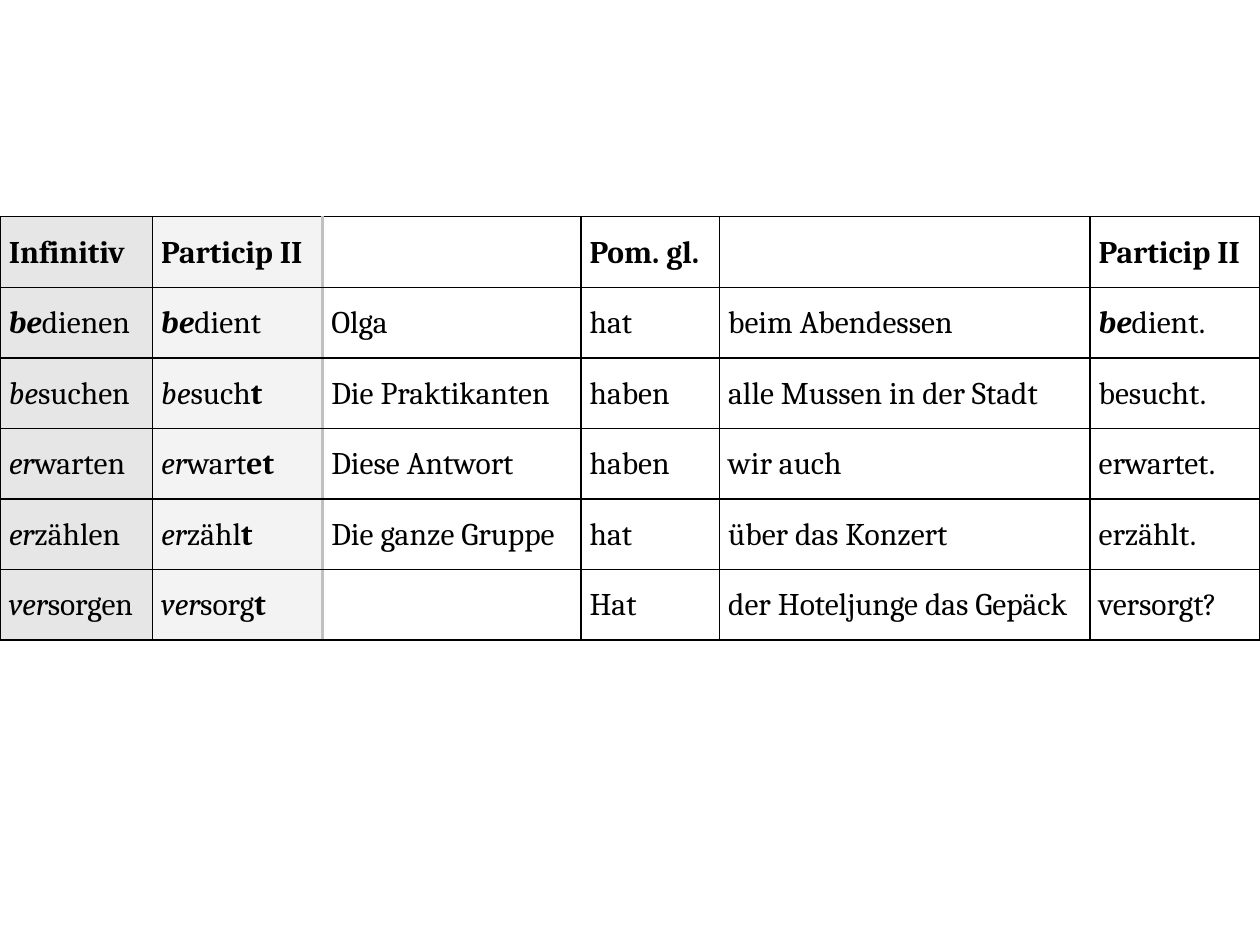
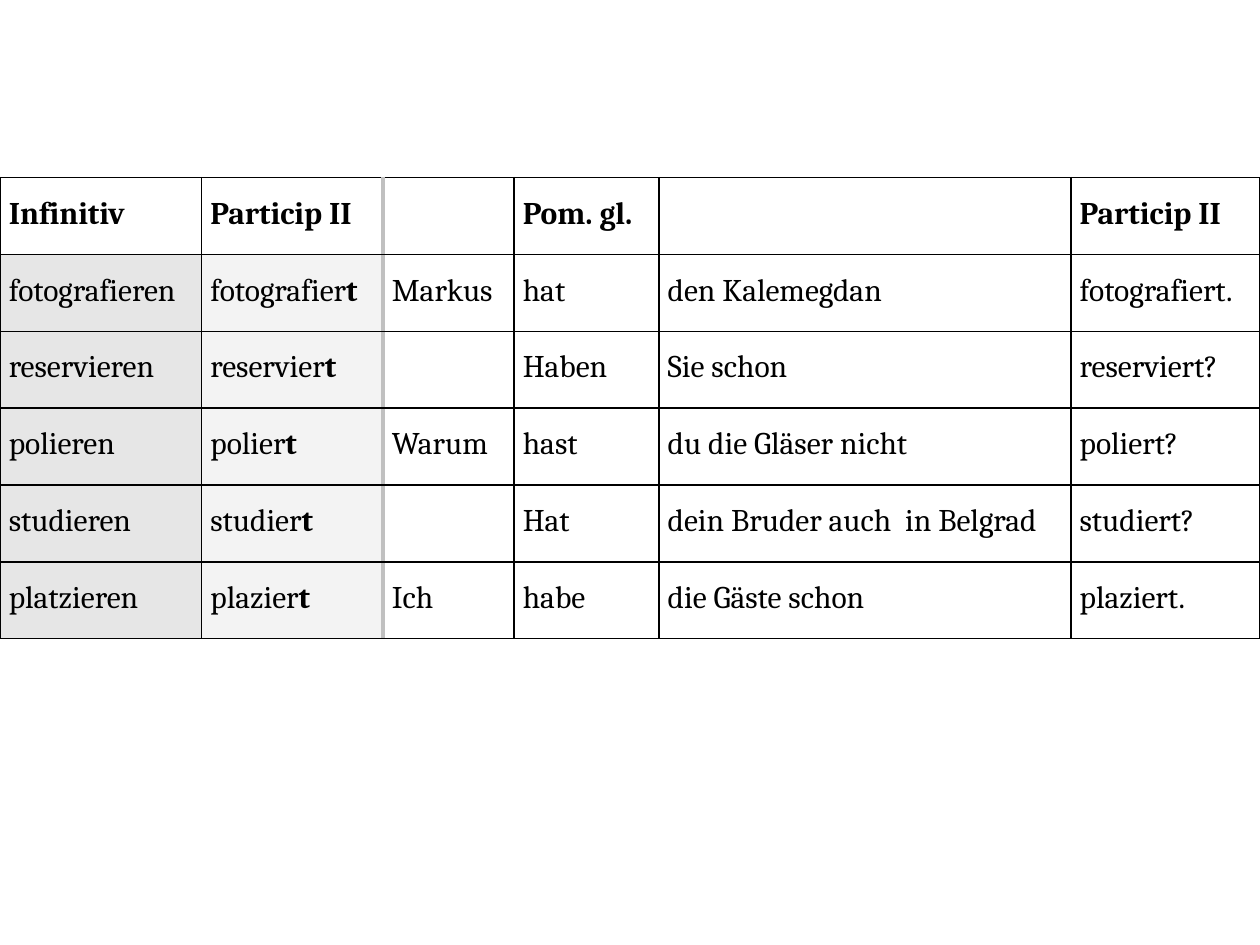
from dataclasses import dataclass

from lxml.etree import SubElement
from pptx import Presentation
from pptx.dml.color import RGBColor
from pptx.oxml.ns import qn
from pptx.presentation import Presentation as Deck
from pptx.table import Table, _Cell as Cell
from pptx.util import Emu, Pt

EMU_PER_PX = 9144
SLIDE_WIDTH, SLIDE_HEIGHT = 1000, 750
BLANK_LAYOUT = 6
ITALIC_MARK, BOLD_MARK = "/", "*"
HEADER = ("*Infinitiv*", "*Particip II*", "", "*Pom. gl.*", "", "*Particip II*")


@dataclass(frozen=True)
class Theme:
    font: str = "Cambria"
    text_size: int = 18
    line_spacing: float = 1.5
    cell_margin: int = 7
    ink: str = "000000"
    divider: str = "C0C0C0"
    column_fills: tuple[str, ...] = ("E6E6E6", "F3F3F3")
    grid_width: float = 1
    divider_width: float = 2.5


THEME = Theme()


@dataclass(frozen=True)
class VerbTable:
    top: int
    row_height: int
    column_widths: tuple[int, ...]
    shaded_header: bool
    rows: tuple[tuple[str, ...], ...]


PREFIX_VERBS = VerbTable(
    top=172,
    row_height=56,
    column_widths=(121, 135, 205, 110, 294, 135),
    shaded_header=True,
    rows=(
        HEADER,
        ("*/be/*dienen", "*/be/*dient", "Olga", "hat", "beim Abendessen", "*/be/*dient."),
        ("/be/suchen", "/be/such*t*", "Die Praktikanten", "haben", "alle Mussen in der Stadt", "besucht."),
        ("/er/warten", "/er/wart*et*", "Diese Antwort", "haben", "wir auch", "erwartet."),
        ("/er/zählen", "/er/zähl*t*", "Die ganze Gruppe", "hat", "über das Konzert", "erzählt."),
        ("/ver/sorgen", "/ver/sorg*t*", "", "Hat", "der Hoteljunge das Gepäck", "versorgt?"),
    ),
)

IEREN_VERBS = VerbTable(
    top=141,
    row_height=61,
    column_widths=(160, 144, 104, 115, 327, 150),
    shaded_header=False,
    rows=(
        HEADER,
        ("fotografieren", "fotografier*t*", "Markus", "hat", "den Kalemegdan", "fotografiert."),
        ("reservieren", "reservier*t*", "", "Haben", "Sie schon", "reserviert?"),
        ("polieren", "polier*t*", "Warum", "hast", "du die Gläser nicht", "poliert?"),
        ("studieren", "studier*t*", "", "Hat", "dein Bruder auch  in Belgrad", "studiert?"),
        ("platzieren", "plazier*t*", "Ich", "habe", "die Gäste schon", "plaziert."),
    ),
)


def px(length: int) -> Emu:
    return Emu(length * EMU_PER_PX)


def add_text(paragraph, text: str, *, bold: bool = False, italic: bool = False) -> None:
    run = paragraph.add_run()
    run.text = text
    font = run.font
    font.name = THEME.font
    font.size = Pt(THEME.text_size)
    font.color.rgb = RGBColor.from_string(THEME.ink)
    font.bold = bold
    font.italic = italic


def write_marked_text(cell: Cell, marked: str) -> None:
    paragraph = cell.text_frame.paragraphs[0]
    paragraph.line_spacing = THEME.line_spacing
    bold = italic = False
    pending = ""
    for character in marked:
        if character not in (BOLD_MARK, ITALIC_MARK):
            pending += character
            continue
        if pending:
            add_text(paragraph, pending, bold=bold, italic=italic)
            pending = ""
        bold ^= character == BOLD_MARK
        italic ^= character == ITALIC_MARK
    if pending:
        add_text(paragraph, pending, bold=bold, italic=italic)


def set_borders(cell: Cell, divider_side: str) -> None:
    properties = cell._tc.get_or_add_tcPr()
    for side in "LRTB":
        is_divider = side == divider_side
        width = THEME.divider_width if is_divider else THEME.grid_width
        color = THEME.divider if is_divider else THEME.ink
        line = SubElement(properties, qn(f"a:ln{side}"), w=str(Pt(width)))
        fill = SubElement(line, qn("a:solidFill"))
        SubElement(fill, qn("a:srgbClr"), val=color)


def format_cell(cell: Cell, column: int, shaded: bool) -> None:
    cell.margin_left = cell.margin_right = px(THEME.cell_margin)
    cell.margin_top = cell.margin_bottom = 0
    set_borders(cell, {1: "R", 2: "L"}.get(column, ""))
    if shaded and column < len(THEME.column_fills):
        cell.fill.solid()
        cell.fill.fore_color.rgb = RGBColor.from_string(THEME.column_fills[column])
    else:
        cell.fill.background()


def fill_table(table: Table, verbs: VerbTable) -> None:
    table.first_row = table.horz_banding = False
    for column, width in zip(table.columns, verbs.column_widths):
        column.width = px(width)
    for row_index, texts in enumerate(verbs.rows):
        table.rows[row_index].height = px(verbs.row_height)
        shaded = row_index > 0 or verbs.shaded_header
        for column_index, text in enumerate(texts):
            cell = table.cell(row_index, column_index)
            format_cell(cell, column_index, shaded)
            write_marked_text(cell, text)


def add_verb_slide(presentation: Deck, verbs: VerbTable) -> None:
    slide = presentation.slides.add_slide(presentation.slide_layouts[BLANK_LAYOUT])
    shape = slide.shapes.add_table(
        len(verbs.rows),
        len(verbs.column_widths),
        px(0),
        px(verbs.top),
        px(sum(verbs.column_widths)),
        px(verbs.row_height * len(verbs.rows)),
    )
    fill_table(shape.table, verbs)


def main() -> None:
    presentation = Presentation()
    presentation.slide_width = px(SLIDE_WIDTH)
    presentation.slide_height = px(SLIDE_HEIGHT)
    for verbs in (PREFIX_VERBS, IEREN_VERBS):
        add_verb_slide(presentation, verbs)
    presentation.save("out.pptx")


if __name__ == "__main__":
    main()
